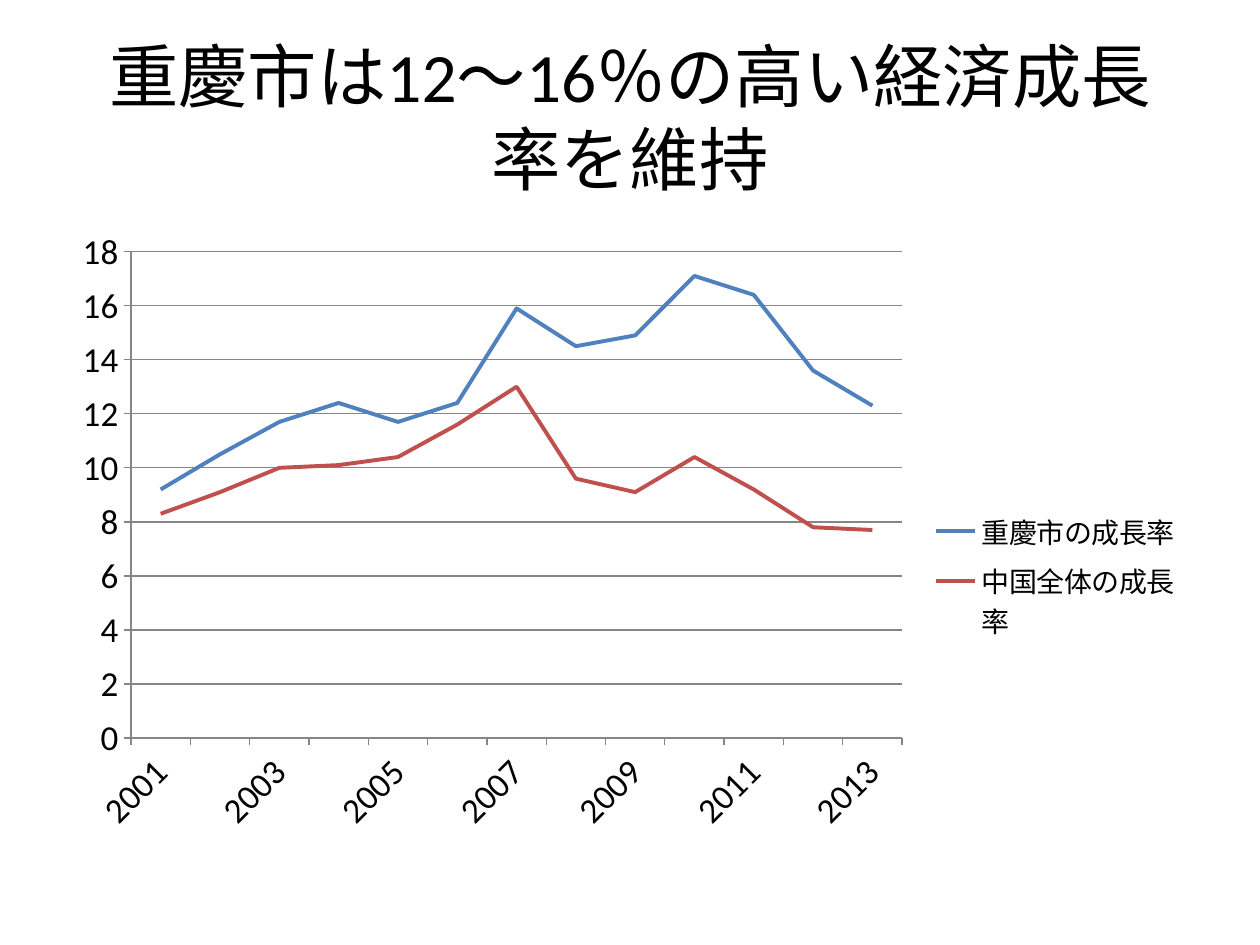
from lxml import etree
from pptx import Presentation
from pptx.chart.data import CategoryChartData
from pptx.dml.color import RGBColor
from pptx.enum.chart import XL_CHART_TYPE, XL_LEGEND_POSITION, XL_TICK_MARK
from pptx.enum.text import MSO_ANCHOR, PP_ALIGN
from pptx.oxml.ns import qn
from pptx.util import Pt

LINE = XL_CHART_TYPE.LINE
RIGHT = XL_LEGEND_POSITION.RIGHT
OUTSIDE, NO_TICK = XL_TICK_MARK.OUTSIDE, XL_TICK_MARK.NONE
MIDDLE, CENTER = MSO_ANCHOR.MIDDLE, PP_ALIGN.CENTER
FONT = "Calibri"
BLACK, GRAY = "000000", "868686"


def rgb(value):
    return RGBColor.from_string(value)


def place(part, index, target, **fractions):
    """Fix a chart part's place, in fractions of the chart area."""
    for old in part.findall(qn("c:layout")):
        part.remove(old)
    layout = etree.Element(qn("c:layout"))
    manual = etree.SubElement(layout, qn("c:manualLayout"))
    if target:
        etree.SubElement(manual, qn("c:layoutTarget")).set("val", target)
    for tag in ("xMode", "yMode"):
        etree.SubElement(manual, qn(f"c:{tag}")).set("val", "edge")
    for tag, value in fractions.items():
        etree.SubElement(manual, qn(f"c:{tag}")).set("val", str(value))
    part.insert(index, layout)


prs = Presentation()
prs.slide_width, prs.slide_height = Pt(720), Pt(540)
slide = prs.slides.add_slide(prs.slide_layouts[6])

# Title
title = slide.shapes.add_textbox(Pt(36), Pt(21.6), Pt(648), Pt(90)).text_frame
title.word_wrap = True
title.vertical_anchor = MIDDLE
heading = title.paragraphs[0]
heading.alignment = CENTER
heading_run = heading.add_run()
heading_run.text = "重慶市は12～16％の高い経済成長率を維持"
heading_run.font.name = FONT
heading_run.font.size = Pt(39.6)
heading_run.font.color.rgb = rgb(BLACK)

# Growth rates
growth = CategoryChartData()
growth.categories = [str(year) for year in range(2001, 2014)]
growth.add_series("重慶市の成長率", [9.2, 10.5, 11.7, 12.4, 11.7, 12.4, 15.9,
                              14.5, 14.9, 17.1, 16.4, 13.6, 12.3])
growth.add_series("中国全体の成長率", [8.3, 9.1, 10, 10.1, 10.4, 11.6, 13,
                               9.6, 9.1, 10.4, 9.2, 7.8, 7.7])
chart = slide.shapes.add_chart(LINE, Pt(36), Pt(126), Pt(648), Pt(356.4),
                               growth).chart
chart.has_title = False
chart.font.name = FONT
chart.font.size = Pt(10)
chart.font.color.rgb = rgb(BLACK)

# Lines
plot = chart.plots[0]
plot.vary_by_categories = False
for series, color in zip(plot.series, ("4F81BD", "C0504D")):
    series.smooth = False
    series.format.line.width = Pt(2.25)
    series.format.line.color.rgb = rgb(color)

# Axes
years, rates = chart.category_axis, chart.value_axis
for axis in (years, rates):
    axis.major_tick_mark = OUTSIDE
    axis.minor_tick_mark = NO_TICK
    axis.tick_labels.font.size = Pt(20)
    axis.format.line.color.rgb = rgb(GRAY)
    axis.format.line.width = Pt(0.75)
rates.minimum_scale, rates.maximum_scale, rates.major_unit = 0, 18, 2
rates.has_major_gridlines = True
rates.major_gridlines.format.line.color.rgb = rgb(GRAY)
rates.major_gridlines.format.line.width = Pt(0.75)

# Slanted labels on every second year
years_xml = chart.element.find(".//" + qn("c:catAx"))
years_xml.find(qn("c:txPr")).find(qn("a:bodyPr")).set("rot", "-2700000")
label_skip = etree.Element(qn("c:tickLblSkip"))
label_skip.set("val", "2")
years_xml.find(qn("c:noMultiLvlLbl")).addprevious(label_skip)

# Legend
chart.has_legend = True
chart.legend.position = RIGHT
chart.legend.include_in_layout = False
chart.legend.font.size = Pt(16)

# Places of plot and legend
place(chart.element.find(".//" + qn("c:plotArea")), 0, "inner",
      x=0.06, y=0.05, w=0.68, h=0.78)
place(chart.element.find(".//" + qn("c:legend")), 1, None,
      x=0.76, y=0.45, w=0.23, h=0.24)

prs.save("out.pptx")
